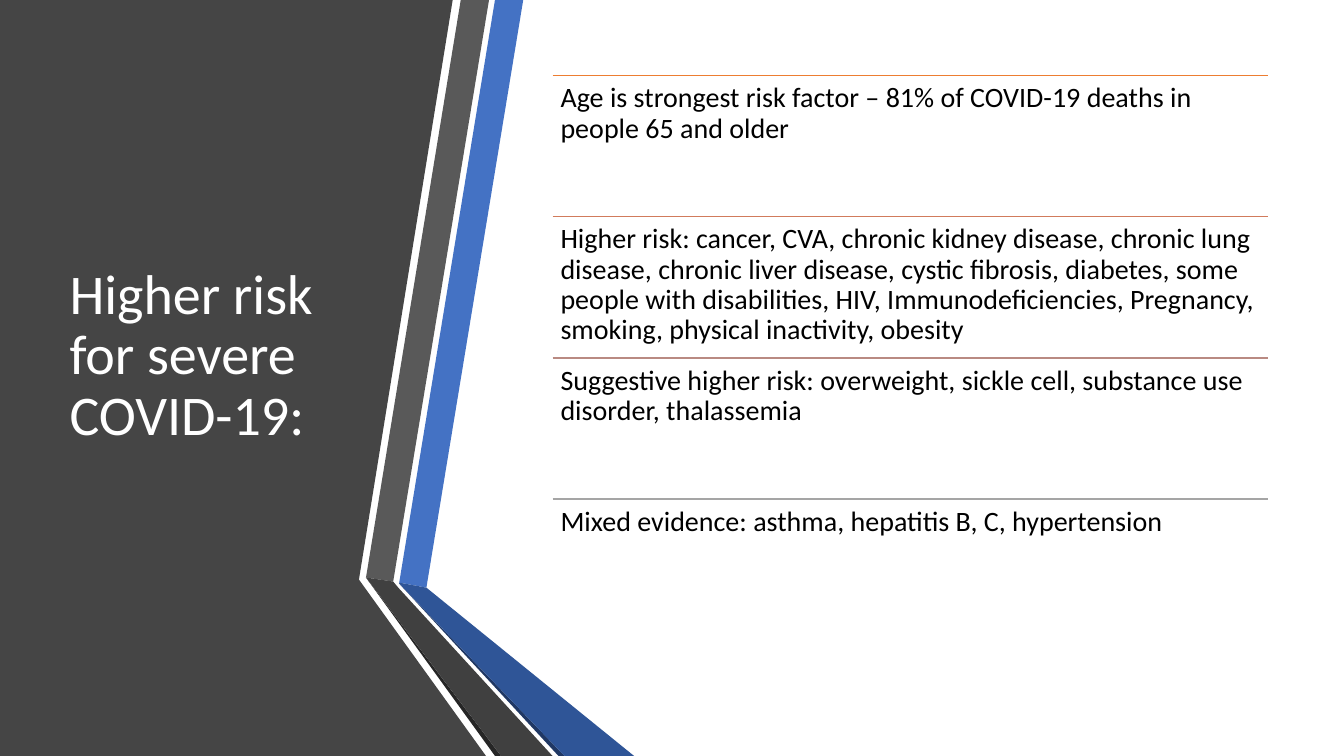
import pptx
import pptx.dml.color
import pptx.enum.shapes
import pptx.enum.text
import pptx.oxml.ns
import pptx.util
from lxml import etree

Inches = pptx.util.Inches
RGBColor = pptx.dml.color.RGBColor

WHITE = RGBColor(0xFF, 0xFF, 0xFF)
BLACK = RGBColor(0x00, 0x00, 0x00)
PANEL_GRAY = RGBColor(0x45, 0x45, 0x45)
BAND_GRAY = RGBColor(0x59, 0x59, 0x59)
FOLD_GRAY = RGBColor(0x40, 0x40, 0x40)
EDGE_GRAY = RGBColor(0x26, 0x26, 0x26)
BAND_BLUE = RGBColor(0x44, 0x72, 0xC4)
FOLD_BLUE = RGBColor(0x2F, 0x55, 0x97)
EDGE_BLUE = RGBColor(0x20, 0x38, 0x64)
RULE_ORANGE = RGBColor(0xED, 0x7D, 0x31)
RULE_COPPER = RGBColor(0xD1, 0x7B, 0x5C)
RULE_ROSE = RGBColor(0xB9, 0x8A, 0x82)
RULE_GRAY = RGBColor(0xA5, 0xA5, 0xA5)

SLIDE_WIDTH, SLIDE_HEIGHT = 13.33, 7.5
LIST_LEFT, LIST_TOP, LIST_WIDTH = 5.48, SLIDE_HEIGHT / 10, 7.1
ROW_HEIGHT = 1.4

PANELS = [
    (PANEL_GRAY, [(0, 0), (4.49, 0), (3.56, 5.75), (4.82, SLIDE_HEIGHT), (0, SLIDE_HEIGHT)]),
    (BAND_BLUE, [(3.96, 5.78), (4.23, 5.83), (5.19, 0), (4.91, 0)]),
    (BAND_GRAY, [(4.85, 0), (4.57, 0), (3.63, 5.73), (3.9, 5.77)]),
    (EDGE_GRAY, [(3.63, 5.73), (4.91, SLIDE_HEIGHT), (4.97, SLIDE_HEIGHT)]),
    (EDGE_BLUE, [(3.96, 5.79), (5.54, SLIDE_HEIGHT), (5.6, SLIDE_HEIGHT)]),
    (FOLD_BLUE, [(3.96, 5.79), (5.6, SLIDE_HEIGHT), (6.29, SLIDE_HEIGHT), (4.23, 5.83), (3.96, 5.78)]),
    (FOLD_GRAY, [(5.48, SLIDE_HEIGHT), (3.95, 5.83), (3.9, 5.77), (3.63, 5.73), (4.97, SLIDE_HEIGHT)]),
]

RISK_GROUPS = [
    (RULE_ORANGE, "Age is strongest risk factor – 81% of COVID-19 deaths in people 65 and older"),
    (RULE_COPPER, "Higher risk: cancer, CVA, chronic kidney disease, chronic lung disease, "
                  "chronic liver disease, cystic fibrosis, diabetes, some people with disabilities, "
                  "HIV, Immunodeficiencies, Pregnancy, smoking, physical inactivity, obesity"),
    (RULE_ROSE, "Suggestive higher risk: overweight, sickle cell, substance use disorder, thalassemia"),
    (RULE_GRAY, "Mixed evidence: asthma, hepatitis B, C, hypertension"),
]


def set_values(target, values):
    for name, value in values.items():
        setattr(target, name, value)


def write_text(box, text, size, color, frame_values):
    set_values(box.text_frame, {"word_wrap": True, **frame_values})
    para = box.text_frame.paragraphs[0]
    set_values(para, {"line_spacing": 0.9, "alignment": pptx.enum.text.PP_ALIGN.LEFT})
    span = para.add_run()
    span.text = text
    set_values(span.font, {"name": "Calibri", "size": pptx.util.Pt(size)})
    span.font.color.rgb = color


deck = pptx.Presentation()
set_values(deck, {"slide_width": Inches(SLIDE_WIDTH), "slide_height": Inches(SLIDE_HEIGHT)})
page = deck.slides.add_slide(deck.slide_layouts.get_by_name("Title Only"))
page.background.fill.solid()
page.background.fill.fore_color.rgb = WHITE

for color, corners in PANELS:
    points = [(Inches(x), Inches(y)) for x, y in corners]
    builder = page.shapes.build_freeform(*points[0])
    builder.add_line_segments(points[1:], close=True)
    panel = builder.convert_to_shape()
    panel.shadow.inherit = False
    panel.fill.solid()
    panel.fill.fore_color.rgb = color
    panel.line.fill.background()

title = page.shapes.title
page.shapes.element.append(title.element)
set_values(title, {"left": Inches(0.59), "top": Inches(LIST_TOP),
                   "width": Inches(3.04), "height": Inches(5.58)})
write_text(title, "Higher risk for severe COVID-19:", 40, WHITE, {
    "vertical_anchor": pptx.enum.text.MSO_ANCHOR.MIDDLE,
    "auto_size": pptx.enum.text.MSO_AUTO_SIZE.NONE,
})

row_format = {f"margin_{side}": Inches(0.08) for side in ("left", "top", "right", "bottom")}
row_format["vertical_anchor"] = pptx.enum.text.MSO_ANCHOR.TOP

for row, (color, text) in enumerate(RISK_GROUPS):
    top = Inches(LIST_TOP + row * ROW_HEIGHT)
    rule = page.shapes.add_connector(
        pptx.enum.shapes.MSO_CONNECTOR.STRAIGHT,
        Inches(LIST_LEFT), top, Inches(LIST_LEFT + LIST_WIDTH), top)
    rule.line.color.rgb = color
    rule.line.width = pptx.util.Pt(1)
    etree.SubElement(rule.element.spPr, pptx.oxml.ns.qn("a:effectLst"))
    box = page.shapes.add_textbox(Inches(LIST_LEFT), top, Inches(LIST_WIDTH), Inches(ROW_HEIGHT))
    write_text(box, text, 20, BLACK, row_format)

deck.save("out.pptx")
